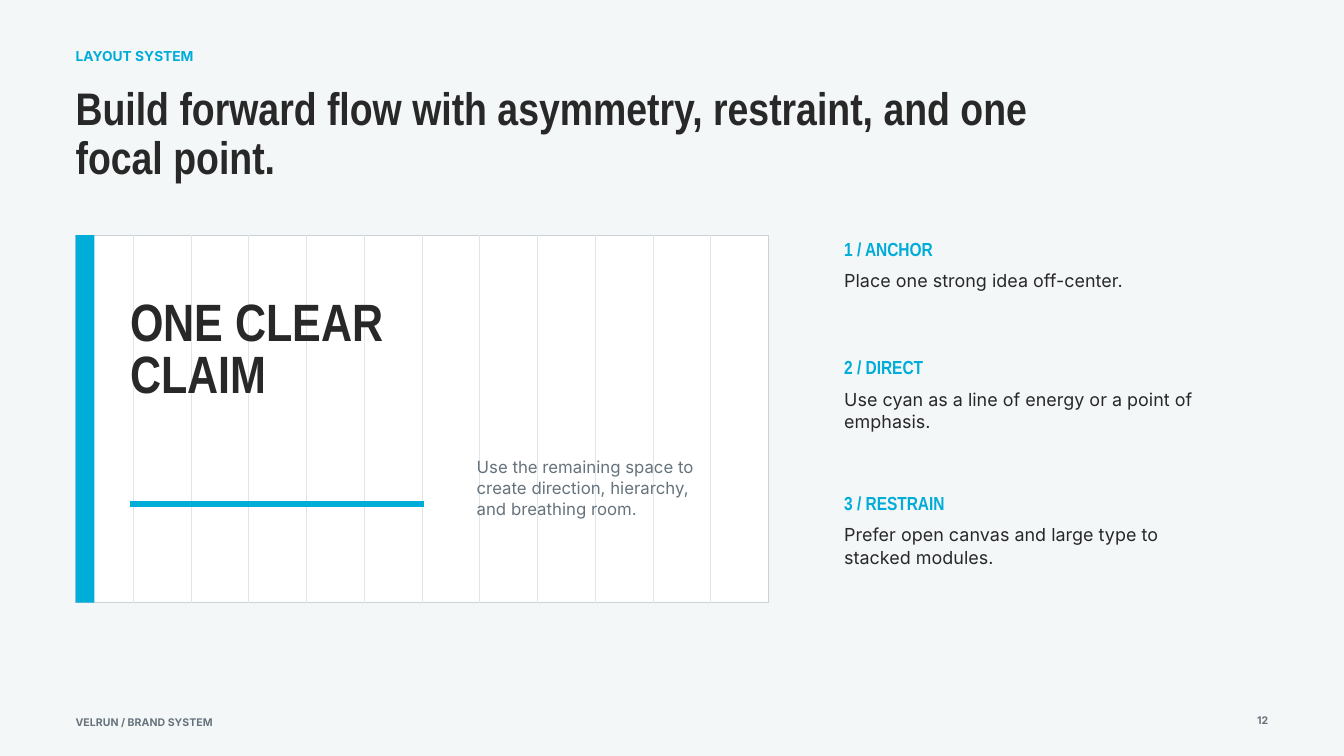
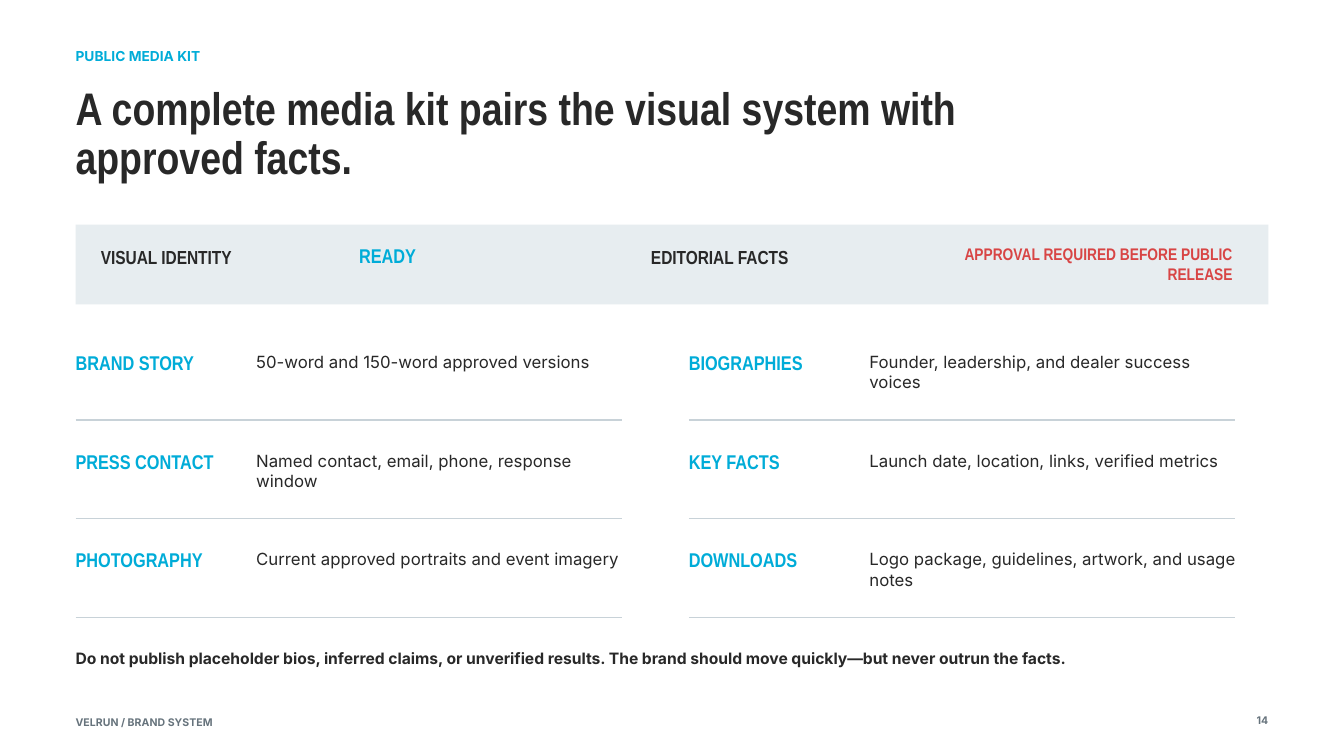
from dataclasses import dataclass
from itertools import product

import pptx
import pptx.dml.color
import pptx.enum.shapes
import pptx.enum.text
import pptx.oxml.ns
import pptx.util
from lxml import etree

COLUMNS, ROWS = 1280, 720  # fine layout grid; all positions are in its cells
CELL = pptx.util.Inches(7.5) // ROWS
LEFT, RIGHT = 72, 1208
HEADING, BODY = "Arial Narrow", "Inter"
COLORS = {
    "cyan": "00ACD8", "ink": "282828", "muted": "66737C", "white": "FFFFFF",
    "mist": "F4F7F8", "band": "E7EDF0", "rule": "C8D2D8", "guide": "DFE6EA",
    "alert": "D84545",
}
ALIGN = pptx.enum.text.PP_ALIGN


@dataclass(frozen=True)
class Area:
    """Left, top, width and height in grid cells."""
    left: float
    top: float
    width: float
    height: float

    def emu(self) -> list[int]:
        return [round(n * CELL) for n in (self.left, self.top, self.width, self.height)]


@dataclass(frozen=True)
class Principle:
    label: str
    advice: str
    gap: float  # points above the label


@dataclass(frozen=True)
class KitEntry:
    label: str
    contents: str


@dataclass(frozen=True)
class StatusLabel:
    text: str
    area: Area
    size: float
    color: str
    align: ALIGN = ALIGN.LEFT


PRINCIPLES = [
    Principle("1 / ANCHOR", "Place one strong idea off-center.", 0),
    Principle("2 / DIRECT", "Use cyan as a line of energy or a point of emphasis.", 46.5),
    Principle("3 / RESTRAIN", "Prefer open canvas and large type to stacked modules.", 42.5),
]
STATUS_LABELS = [
    StatusLabel("VISUAL IDENTITY", Area(96, 234, 220, 22), 13.5, "ink"),
    StatusLabel("READY", Area(342, 232, 90, 24), 14.2, "cyan"),
    StatusLabel("EDITORIAL FACTS", Area(620, 234, 220, 22), 13.5, "ink"),
    StatusLabel("APPROVAL REQUIRED BEFORE PUBLIC RELEASE",
                Area(856, 232, 318, 24), 12, "alert", ALIGN.RIGHT),
]
KIT_ENTRIES = [
    KitEntry("BRAND STORY", "50-word and 150-word approved versions"),
    KitEntry("BIOGRAPHIES", "Founder, leadership, and dealer success voices"),
    KitEntry("PRESS CONTACT", "Named contact, email, phone, response window"),
    KitEntry("KEY FACTS", "Launch date, location, links, verified metrics"),
    KitEntry("PHOTOGRAPHY", "Current approved portraits and event imagery"),
    KitEntry("DOWNLOADS", "Logo package, guidelines, artwork, and usage notes"),
]


def rgb(name: str) -> pptx.dml.color.RGBColor:
    return pptx.dml.color.RGBColor.from_string(COLORS[name])


def write(paragraph, text: str, *, size: float, color: str = "ink", font: str = BODY,
          bold: bool = False, align: ALIGN = ALIGN.LEFT, spacing: float = 1.0,
          before: float = 0) -> None:
    paragraph.alignment = align
    paragraph.line_spacing = spacing
    paragraph.space_before = pptx.util.Pt(before)
    paragraph.space_after = pptx.util.Pt(0)
    run = paragraph.add_run()
    run.text = text
    run.font.size = pptx.util.Pt(size)
    run.font.name = font
    run.font.bold = bold
    run.font.color.rgb = rgb(color)


def prepare_frame(shape):
    """Make the text frame wrap, start at the top and have no margins."""
    frame = shape.text_frame
    frame.word_wrap = True
    frame.auto_size = pptx.enum.text.MSO_AUTO_SIZE.NONE
    frame.vertical_anchor = pptx.enum.text.MSO_ANCHOR.TOP
    frame.margin_left = frame.margin_top = frame.margin_right = frame.margin_bottom = 0
    return frame


def place(placeholder, area: Area):
    placeholder.left, placeholder.top, placeholder.width, placeholder.height = area.emu()
    return prepare_frame(placeholder)


def add_text(slide, area: Area, *lines: str, **text_format) -> None:
    frame = prepare_frame(slide.shapes.add_textbox(*area.emu()))
    for index, line in enumerate(lines):
        paragraph = frame.add_paragraph() if index else frame.paragraphs[0]
        write(paragraph, line, **text_format)


def add_block(slide, area: Area, fill: str, outline: str | None = None) -> None:
    block = slide.shapes.add_shape(pptx.enum.shapes.MSO_SHAPE.RECTANGLE, *area.emu())
    block.shadow.inherit = False
    block.fill.solid()
    block.fill.fore_color.rgb = rgb(fill)
    if outline:
        block.line.color.rgb = rgb(outline)
        block.line.width = pptx.util.Pt(0.75)
    else:
        block.line.fill.background()


def add_rule(slide, area: Area, color: str, weight: float = 0.75) -> None:
    left, top, width, height = area.emu()
    rule = slide.shapes.add_connector(pptx.enum.shapes.MSO_CONNECTOR.STRAIGHT,
                                      left, top, left + width, top + height)
    rule.line.color.rgb = rgb(color)
    rule.line.width = pptx.util.Pt(weight)
    etree.SubElement(rule._element.spPr, pptx.oxml.ns.qn("a:effectLst"))


def add_slide(deck, layout: int, background: str, section: str, title: str, page: int):
    """Add a slide with its section label, title, footer and page number."""
    slide = deck.slides.add_slide(deck.slide_layouts[layout])
    slide.background.fill.solid()
    slide.background.fill.fore_color.rgb = rgb(background)
    add_text(slide, Area(LEFT, 46, 420, 22), section, size=9.8, color="cyan", bold=True)
    title_frame = place(slide.shapes.title, Area(LEFT, 82, 980, 94))
    write(title_frame.paragraphs[0], title, size=32.6, font=HEADING, bold=True, spacing=0.9)
    footer = dict(size=7.5, color="muted", bold=True)
    add_text(slide, Area(LEFT, 682, 300, 18), "VELRUN / BRAND SYSTEM", **footer)
    add_text(slide, Area(RIGHT - 28, 680, 28, 18), str(page), align=ALIGN.RIGHT, **footer)
    return slide


def add_principles(placeholder, area: Area) -> None:
    frame = place(placeholder, area)
    for index, principle in enumerate(PRINCIPLES):
        label = frame.add_paragraph() if index else frame.paragraphs[0]
        advice = frame.add_paragraph()
        for paragraph in (label, advice):
            properties = paragraph._p.get_or_add_pPr()
            properties.set("marL", "0")
            properties.set("indent", "0")
            etree.SubElement(properties, pptx.oxml.ns.qn("a:buNone"))
        write(label, principle.label, size=13.5, color="cyan", font=HEADING, bold=True,
              before=principle.gap)
        write(advice, principle.advice, size=12.8, spacing=1.05, before=6)


def build_layout_slide(deck) -> None:
    slide = add_slide(deck, 1, "mist", "LAYOUT SYSTEM",
                      "Build forward flow with asymmetry, restraint, and one focal point.", 12)
    panel = Area(LEFT, 224, 660, 350)
    add_block(slide, panel, "white", "rule")
    guide_columns = 12
    for column in range(1, guide_columns):
        guide_left = panel.left + column * panel.width / guide_columns
        add_rule(slide, Area(guide_left, panel.top, 0, panel.height), "guide")
    add_block(slide, Area(panel.left, panel.top, 18, panel.height), "cyan")
    add_text(slide, Area(124, 286, 300, 130), "ONE CLEAR", "CLAIM",
             size=37.5, font=HEADING, bold=True, spacing=0.82)
    add_text(slide, Area(454, 434, 220, 78),
             "Use the remaining space to create direction, hierarchy, and breathing room.",
             size=12, color="muted", spacing=1.05)
    add_rule(slide, Area(124, 480, 280, 0), "cyan", 3.75)
    add_principles(slide.placeholders[1], Area(804, 226, 360, 332))


def build_media_kit_slide(deck) -> None:
    slide = add_slide(deck, 5, "white", "PUBLIC MEDIA KIT",
                      "A complete media kit pairs the visual system with approved facts.", 14)
    add_block(slide, Area(LEFT, 214, RIGHT - LEFT, 76), "band")
    for status in STATUS_LABELS:
        add_text(slide, status.area, status.text, size=status.size, color=status.color,
                 font=HEADING, bold=True, align=status.align)
    for (row, column), entry in zip(product(range(3), range(2)), KIT_ENTRIES):
        left, top = LEFT + column * 584, 334 + row * 94
        add_text(slide, Area(left, top, 160, 24), entry.label,
                 size=14.2, color="cyan", font=HEADING, bold=True)
        add_text(slide, Area(left + 172, top + 1, 356, 48), entry.contents, size=12)
        add_rule(slide, Area(left, top + 66, 520, 0), "rule")
    add_text(slide, Area(LEFT, 618, 1090, 32),
             "Do not publish placeholder bios, inferred claims, or unverified results. "
             "The brand should move quickly—but never outrun the facts.",
             size=11.2, bold=True)


def main() -> None:
    deck = pptx.Presentation()
    deck.slide_width, deck.slide_height = COLUMNS * CELL, ROWS * CELL
    build_layout_slide(deck)
    build_media_kit_slide(deck)
    deck.save("out.pptx")


if __name__ == "__main__":
    main()
